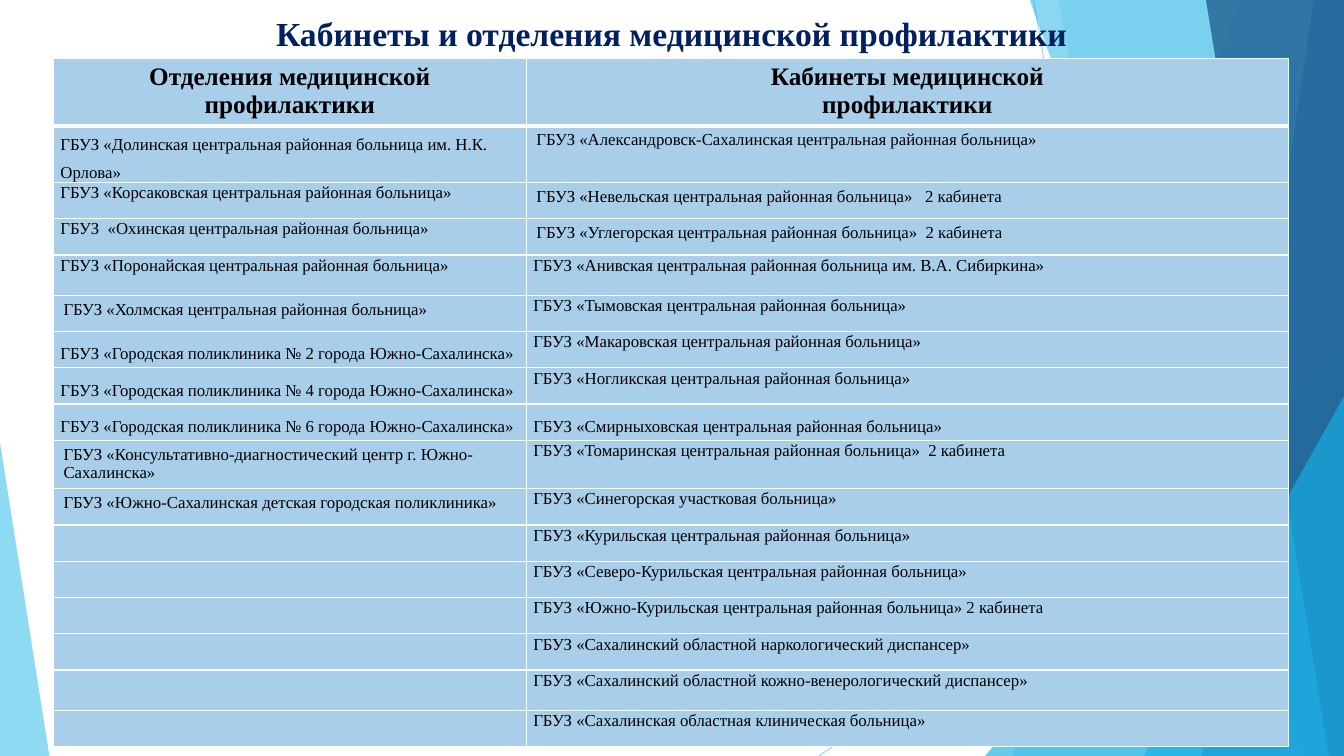
from dataclasses import dataclass

from lxml.etree import SubElement
from pptx import Presentation
from pptx.dml.color import RGBColor
from pptx.enum.shapes import MSO_CONNECTOR, MSO_SHAPE
from pptx.enum.text import MSO_ANCHOR, PP_ALIGN
from pptx.oxml.ns import qn
from pptx.util import Inches, Pt

WIDTH, HEIGHT = 13.33, 7.5
FONT = "Times New Roman"
SKY, AZURE, BLUE, NAVY = "5FCBEF", "17B0E4", "2E83C3", "226292"
CELL_FILL, WHITE, BLACK, TITLE_COLOR = "A8CEEA", "FFFFFF", "000000", "002060"


@dataclass(frozen=True)
class Ray:
    start: tuple[float, float]
    end: tuple[float, float]


@dataclass(frozen=True)
class Shard:
    """Band from a slanted left edge to the right side of the slide."""
    top_x: float
    bottom_x: float
    color: str
    opacity: int


@dataclass(frozen=True)
class Triangle:
    left: float
    top: float
    width: float
    apex: float
    color: str
    opacity: int


@dataclass(frozen=True)
class CellStyle:
    side: float = 0.1
    edge: float = 0.05
    spacing: float | None = None
    anchor: MSO_ANCHOR = MSO_ANCHOR.TOP
    size: int = 12
    bold: bool = False
    align: PP_ALIGN = PP_ALIGN.LEFT


HEADER = CellStyle(size=18, bold=True, align=PP_ALIGN.CENTER)
PLAIN = CellStyle()
SNUG = CellStyle(0.07, 0, 1.07)
MIDDLE = CellStyle(0.07, 0, 1.5, MSO_ANCHOR.MIDDLE)


@dataclass(frozen=True)
class Entry:
    text: str = ""
    style: CellStyle = SNUG


@dataclass(frozen=True)
class Row:
    left: Entry
    right: Entry
    height: float = 0.36


RAYS = [Ray((10.25, 0), (11.58, HEIGHT)), Ray((WIDTH, 4.03), (8.12, HEIGHT))]
FACETS = [
    Shard(12.28, 10.04, SKY, 36),
    Shard(10.5, 11.83, SKY, 20),
    Triangle(9.77, 3.33, 3.56, 1, AZURE, 66),
    Shard(10.21, 12.91, AZURE, 50),
    Shard(13.03, 11.92, BLUE, 70),
    Shard(11.96, 13.18, NAVY, 80),
    Triangle(11.34, 3.93, 1.99, 1, AZURE, 66),
    Triangle(0, 4.39, 0.49, 0, SKY, 70),
]
COLUMN_WIDTHS = [4.69, 7.56]
ROWS = [
    Row(Entry("Отделения медицинской профилактики", HEADER),
        Entry("Кабинеты медицинской\nпрофилактики", HEADER), 0.67),
    Row(Entry("ГБУЗ «Долинская центральная районная больница им. Н.К. Орлова»", MIDDLE),
        Entry("ГБУЗ «Александровск-Сахалинская центральная районная больница»", PLAIN), 0.56),
    Row(Entry("ГБУЗ «Корсаковская центральная районная больница»"),
        Entry("ГБУЗ «Невельская центральная районная больница»   2 кабинета", PLAIN)),
    Row(Entry("ГБУЗ  «Охинская центральная районная больница»"),
        Entry("ГБУЗ «Углегорская центральная районная больница»  2 кабинета", PLAIN)),
    Row(Entry("ГБУЗ «Поронайская центральная районная больница»"),
        Entry("ГБУЗ «Анивская центральная районная больница им. В.А. Сибиркина»"), 0.4),
    Row(Entry("ГБУЗ «Холмская центральная районная больница»", PLAIN),
        Entry("ГБУЗ «Тымовская центральная районная больница»")),
    Row(Entry("ГБУЗ «Городская поликлиника № 2 города Южно-Сахалинска»", MIDDLE),
        Entry("ГБУЗ «Макаровская центральная районная больница»")),
    Row(Entry("ГБУЗ «Городская поликлиника № 4 города Южно-Сахалинска»", MIDDLE),
        Entry("ГБУЗ «Ногликская центральная районная больница»")),
    Row(Entry("ГБУЗ «Городская поликлиника № 6 города Южно-Сахалинска»", MIDDLE),
        Entry("ГБУЗ «Смирныховская центральная районная больница»", MIDDLE)),
    Row(Entry("ГБУЗ «Консультативно-диагностический центр г. Южно-Сахалинска»", PLAIN),
        Entry("ГБУЗ «Томаринская центральная районная больница»  2 кабинета"), 0.48),
    Row(Entry("ГБУЗ «Южно-Сахалинская детская городская поликлиника»", PLAIN),
        Entry("ГБУЗ «Синегорская участковая больница»")),
    Row(Entry(), Entry("ГБУЗ «Курильская центральная районная больница»")),
    Row(Entry(), Entry("ГБУЗ «Северо-Курильская центральная районная больница»")),
    Row(Entry(), Entry("ГБУЗ «Южно-Курильская центральная районная больница» 2 кабинета")),
    Row(Entry(), Entry("ГБУЗ «Сахалинский областной наркологический диспансер»")),
    Row(Entry(), Entry("ГБУЗ «Сахалинский областной кожно-венерологический диспансер»"), 0.4),
    Row(Entry(), Entry("ГБУЗ «Сахалинская областная клиническая больница»")),
]


def paint(fill, color: str, opacity: int = 100) -> None:
    fill.solid()
    fill.fore_color.rgb = RGBColor.from_string(color)
    if opacity < 100:
        for tone in fill._xPr.iter(qn("a:srgbClr")):
            SubElement(tone, qn("a:alpha"), val=str(opacity * 1000))


def add_span(para, text: str, size: int, color: str, bold: bool) -> None:
    span = para.add_run()
    span.text = text
    span.font.name, span.font.size, span.font.bold = FONT, Pt(size), bold
    paint(span.font.fill, color)


def draw_ray(page, ray: Ray) -> None:
    points = [Inches(value) for value in ray.start + ray.end]
    line = page.shapes.add_connector(MSO_CONNECTOR.STRAIGHT, *points)
    line.line.width = Pt(0.75)
    paint(line.line.fill, SKY, 70)
    SubElement(line.element.spPr, qn("a:effectLst"))


def draw_facet(page, facet: Shard | Triangle) -> None:
    if isinstance(facet, Shard):
        top, right, bottom = Inches(-0.01), Inches(WIDTH), Inches(HEIGHT)
        builder = page.shapes.build_freeform(Inches(facet.top_x), top)
        builder.add_line_segments([(right, top), (right, bottom), (Inches(facet.bottom_x), bottom)])
        shape = builder.convert_to_shape()
    else:
        shape = page.shapes.add_shape(
            MSO_SHAPE.ISOSCELES_TRIANGLE, Inches(facet.left), Inches(facet.top),
            Inches(facet.width), Inches(HEIGHT - facet.top))
        shape.adjustments[0] = facet.apex
    paint(shape.fill, facet.color, facet.opacity)
    shape.line.fill.background()
    shape.shadow.inherit = False


def place_title(page, text: str) -> None:
    title = page.shapes.title
    title.left, title.top, title.width, title.height = map(Inches, (1.96, 0.07, 9.4, 0.51))
    title.element.getparent().append(title.element)  # in front of the facets
    frame = title.text_frame
    frame.word_wrap, frame.vertical_anchor = True, MSO_ANCHOR.BOTTOM
    para = frame.paragraphs[0]
    para.alignment = PP_ALIGN.CENTER
    add_span(para, text, 24, TITLE_COLOR, True)


def set_borders(cell, top: float, bottom: float) -> None:
    properties = cell._tc.get_or_add_tcPr()
    for side, width in (("L", 1), ("R", 1), ("T", top), ("B", bottom)):
        border = SubElement(properties, qn(f"a:ln{side}"), w=str(Pt(width)))
        SubElement(SubElement(border, qn("a:solidFill")), qn("a:srgbClr"), val=WHITE)


def fill_cell(cell, entry: Entry) -> None:
    style = entry.style
    paint(cell.fill, CELL_FILL)
    cell.margin_left = cell.margin_right = Inches(style.side)
    cell.margin_top = cell.margin_bottom = Inches(style.edge)
    cell.vertical_anchor = style.anchor
    frame = cell.text_frame
    for number, text in enumerate(entry.text.splitlines()):
        para = frame.add_paragraph() if number else frame.paragraphs[0]
        para.alignment, para.line_spacing = style.align, style.spacing
        add_span(para, text, style.size, BLACK, style.bold)


def add_clinic_table(page) -> None:
    table = page.shapes.add_table(
        len(ROWS), len(COLUMN_WIDTHS), Inches(0.53), Inches(0.58),
        Inches(sum(COLUMN_WIDTHS)), Inches(sum(row.height for row in ROWS))).table
    for column, width in zip(table.columns, COLUMN_WIDTHS):
        column.width = Inches(width)
    for index, row in enumerate(ROWS):
        table.rows[index].height = Inches(row.height)
        for column, entry in enumerate((row.left, row.right)):
            cell = table.cell(index, column)
            set_borders(cell, 3 if index == 1 else 1, 3 if index == 0 else 1)
            fill_cell(cell, entry)


def main() -> None:
    deck = Presentation()
    deck.slide_width, deck.slide_height = Inches(WIDTH), Inches(HEIGHT)
    page = deck.slides.add_slide(deck.slide_layouts[5])
    # Background
    for ray in RAYS:
        draw_ray(page, ray)
    for facet in FACETS:
        draw_facet(page, facet)
    # Content
    place_title(page, "Кабинеты и отделения медицинской профилактики")
    add_clinic_table(page)
    deck.save("out.pptx")


if __name__ == "__main__":
    main()
